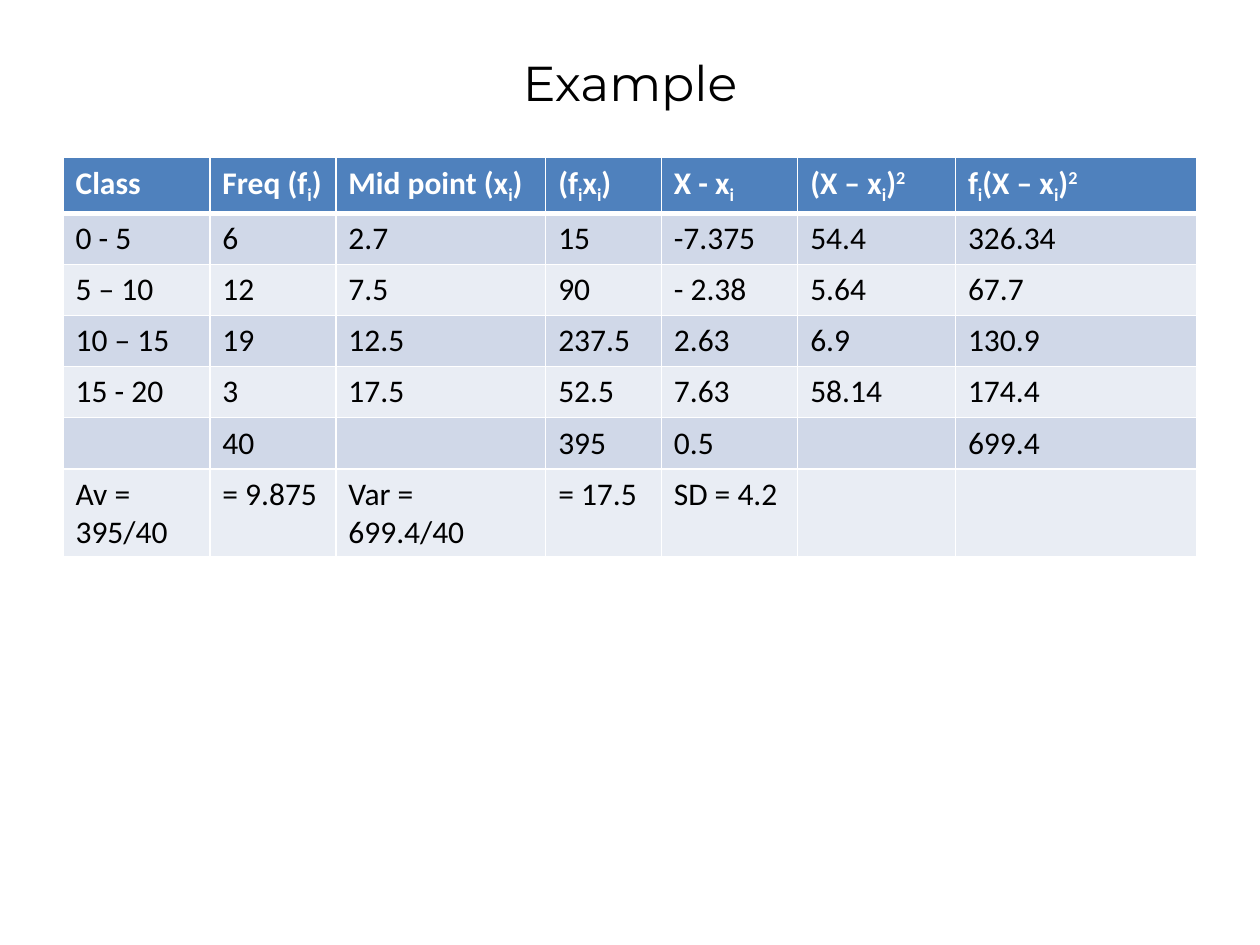
from dataclasses import dataclass

from pptx import Presentation
from pptx import util as u
from pptx.dml import color
from pptx.enum import text
from pptx.oxml import ns
from lxml import etree


@dataclass(frozen=True)
class Run:
    content: str
    baseline: int = 0


@dataclass(frozen=True)
class Style:
    size: int
    font: str
    colour: str
    bold: bool = False


WHITE = "FFFFFF"
HEADER_FILL = "4F81BD"
BAND_FILLS = ("D0D8E8", "E9EDF4")
TITLE_STYLE = Style(28, "Montserrat", "000000")
HEADER_STYLE = Style(18, "Calibri", WHITE, True)
BODY_STYLE = Style(18, "Calibri", "000000")

INDEX = Run("i", -25000)
SQUARE = Run("2", 30000)
CLOSE = Run(")")
DEVIATION_SQUARED = (Run("(X – x"), INDEX, CLOSE, SQUARE)

HEADERS = (
    (Run("Class"),),
    (Run("Freq (f"), INDEX, CLOSE),
    (Run("Mid point (x"), INDEX, CLOSE),
    (Run("(f"), INDEX, Run("x"), INDEX, CLOSE),
    (Run("X - x"), INDEX),
    DEVIATION_SQUARED,
    (Run("f"), INDEX, *DEVIATION_SQUARED),
)
BODY = (
    ("0 - 5", "6", "2.7", "15", "-7.375", "54.4", "326.34"),
    ("5 – 10", "12", "7.5", "90", "- 2.38", "5.64", "67.7"),
    ("10 – 15", "19", "12.5", "237.5", "2.63", "6.9", "130.9"),
    ("15 - 20", "3", "17.5", "52.5", "7.63", "58.14", "174.4"),
    ("", "40", "", "395", "0.5", "", "699.4"),
    ("Av = 395/40", "= 9.875", "Var = 699.4/40", "= 17.5", "SD = 4.2", "", ""),
)
COLUMN_WIDTHS = (2.96, 2.54, 4.23, 2.33, 2.75, 3.18, 4.87)
ROW_HEIGHT = 1.03
MARGIN = 1.27
CONTENT_WIDTH = 22.86


def rgb(value: str) -> color.RGBColor:
    return color.RGBColor.from_string(value)


def add_runs(paragraph, runs: tuple[Run, ...], style: Style) -> None:
    for item in runs:
        run = paragraph.add_run()
        run.text = item.content
        run.font.size = u.Pt(style.size)
        run.font.name = style.font
        run.font.bold = style.bold
        run.font.color.rgb = rgb(style.colour)
        if item.baseline:
            run.font._element.set("baseline", str(item.baseline))


def add_borders(cell, top: float, bottom: float) -> None:
    properties = cell._tc.get_or_add_tcPr()
    for side, width in (("L", 1), ("R", 1), ("T", top), ("B", bottom)):
        line = etree.SubElement(properties, ns.qn(f"a:ln{side}"), w=str(u.Pt(width)))
        fill = etree.SubElement(line, ns.qn("a:solidFill"))
        etree.SubElement(fill, ns.qn("a:srgbClr"), val=WHITE)


def fill_cell(cell, runs: tuple[Run, ...], style: Style, fill: str,
              top: float, bottom: float) -> None:
    add_runs(cell.text_frame.paragraphs[0], runs, style)
    add_borders(cell, top, bottom)
    cell.fill.solid()
    cell.fill.fore_color.rgb = rgb(fill)


def add_title(slide, title: str) -> None:
    shape = slide.shapes.add_textbox(
        u.Cm(MARGIN), u.Cm(0.76), u.Cm(CONTENT_WIDTH), u.Cm(1.78))
    frame = shape.text_frame
    frame.word_wrap = True
    frame.vertical_anchor = text.MSO_ANCHOR.MIDDLE
    paragraph = frame.paragraphs[0]
    paragraph.alignment = text.PP_ALIGN.CENTER
    add_runs(paragraph, (Run(title),), TITLE_STYLE)


def add_frequency_table(slide) -> None:
    shape = slide.shapes.add_table(
        len(BODY) + 1, len(HEADERS), u.Cm(MARGIN), u.Cm(3.18),
        u.Cm(CONTENT_WIDTH), u.Cm(7.95))
    table = shape.table
    for column, width in zip(table.columns, COLUMN_WIDTHS):
        column.width = u.Cm(width)
    for row in table.rows:
        row.height = u.Cm(ROW_HEIGHT)
    shape.height = u.Cm(7.95)

    for column, runs in enumerate(HEADERS):
        fill_cell(table.cell(0, column), runs, HEADER_STYLE, HEADER_FILL, 1, 3)
    for row, values in enumerate(BODY):
        for column, value in enumerate(values):
            runs = (Run(value),) if value else ()
            fill_cell(table.cell(row + 1, column), runs, BODY_STYLE,
                      BAND_FILLS[row % 2], 1 if row else 3, 1)


def main() -> None:
    presentation = Presentation()
    presentation.slide_width = u.Cm(25.4)
    presentation.slide_height = u.Cm(19.05)
    slide = presentation.slides.add_slide(presentation.slide_layouts[6])
    add_title(slide, "Example")
    add_frequency_table(slide)
    presentation.save("out.pptx")


if __name__ == "__main__":
    main()
